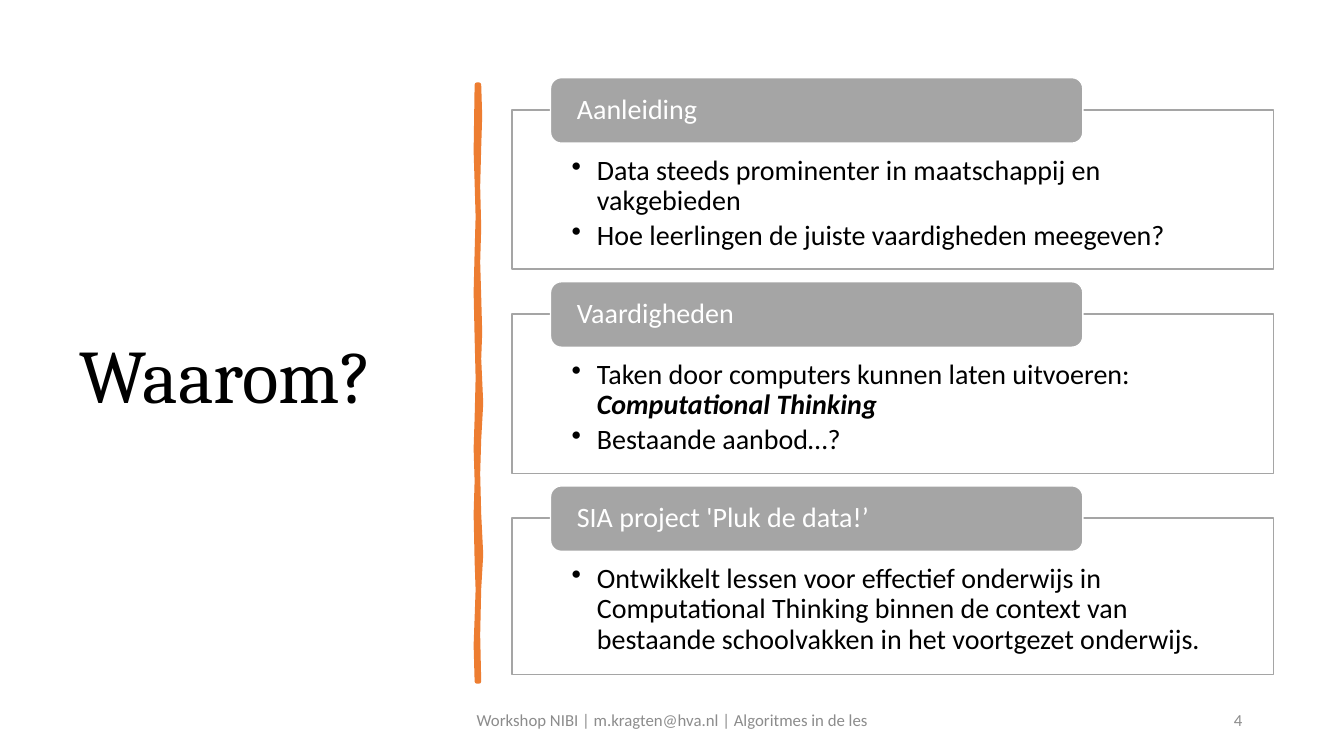
from pptx import Presentation
from pptx.dml.color import RGBColor
from pptx.enum import shapes as kinds, text as t
from pptx.util import Inches, Pt

COLORS = {"text": "000000", "card": "FFFFFF", "gray": "A5A5A5",
          "accent": "ED7D31", "footer": "8C8C8C"}
EMPHASIS = "Computational Thinking"
# heading, card height, bullets; each bullet is a list of runs
SECTIONS = [
    ("Aanleiding", 1.58, [
        ["Data steeds prominenter in maatschappij en vakgebieden"],
        ["Hoe leerlingen de juiste vaardigheden meegeven?"]]),
    ("Vaardigheden", 1.58, [
        ["Taken door computers kunnen laten uitvoeren: ", EMPHASIS],
        ["Bestaande aanbod…?"]]),
    ("SIA project 'Pluk de data!’", 1.55, [
        ["Ontwikkelt lessen voor effectief onderwijs in Computational Thinking "
         "binnen de context van bestaande schoolvakken in het voortgezet onderwijs."]]),
]
FIRST_CARD_TOP, CARD_PITCH = 1.09, 2.025
# brush stroke edges in hundredths of an inch
RIGHT_EDGE = [(475, 84), (476, 115), (475, 146), (474, 185), (475, 226), (474, 260),
              (475, 294), (476, 330), (475, 356), (477, 400), (475, 436), (474, 470),
              (475, 510), (477, 550), (475, 584), (474, 630), (475, 676)]
LEFT_EDGE = [(473, 676), (472, 640), (473, 613), (474, 585), (473, 557), (472, 510),
             (473, 477), (472, 445), (473, 415), (474, 375), (473, 335), (472, 290),
             (473, 250), (474, 215), (473, 181), (472, 150), (473, 84)]


def rgb(name):
    return RGBColor.from_string(COLORS[name])


def style_font(font, size, color, name="Calibri"):
    font.size, font.name = Pt(size), name
    font.color.rgb = rgb(color)


def paint(shape, fill, line, width):
    shape.shadow.inherit = False
    shape.fill.solid()
    shape.fill.fore_color.rgb = rgb(fill)
    shape.line.color.rgb = rgb(line)
    shape.line.width = Pt(width)


def set_frame(frame, anchor, left=0.1, top=0.05, right=0.1, bottom=0.05):
    frame.word_wrap = True
    frame.auto_size = t.MSO_AUTO_SIZE.NONE
    frame.vertical_anchor = anchor
    frame.margin_left, frame.margin_top = Inches(left), Inches(top)
    frame.margin_right, frame.margin_bottom = Inches(right), Inches(bottom)


def write_line(frame, words, size, color, align, name="Calibri"):
    frame.text = words
    paragraph = frame.paragraphs[0]
    paragraph.alignment = align
    paragraph.line_spacing = 0.9
    style_font(paragraph.runs[0].font, size, color, name)


def add_bullet(paragraph, parts):
    paragraph.alignment = t.PP_ALIGN.LEFT
    paragraph.line_spacing = 0.9
    paragraph.space_after = Pt(3)
    properties = paragraph._p.get_or_add_pPr()
    properties.set("marL", str(Inches(0.25)))
    properties.set("indent", str(-Inches(0.25)))
    bullet = properties.makeelement(
        "{http://schemas.openxmlformats.org/drawingml/2006/main}buChar", {"char": "•"})
    properties.append(bullet)
    for part in parts:
        run = paragraph.add_run()
        run.text = part
        style_font(run.font, 20, "text")
        if part == EMPHASIS:
            run.font.bold = run.font.italic = True


def add_section(slide, top, heading, height, bullets):
    """Outlined card of bullets with a heading tab over its top edge."""
    card = slide.shapes.add_shape(kinds.MSO_SHAPE.RECTANGLE, Inches(5.08), Inches(top),
                                  Inches(7.55), Inches(height))
    paint(card, "card", "gray", 1)
    frame = card.text_frame
    set_frame(frame, t.MSO_ANCHOR.TOP, 0.59, 0.46, 0.59, 0.16)
    for index, parts in enumerate(bullets):
        add_bullet(frame.add_paragraph() if index else frame.paragraphs[0], parts)

    tab = slide.shapes.add_shape(kinds.MSO_SHAPE.ROUNDED_RECTANGLE, Inches(5.46),
                                 Inches(top - 0.32), Inches(5.28), Inches(0.65))
    paint(tab, "gray", "card", 1)
    set_frame(tab.text_frame, t.MSO_ANCHOR.MIDDLE, 0.23, 0, 0.23, 0)
    write_line(tab.text_frame, heading, 20, "card", t.PP_ALIGN.LEFT)


def add_title(slide):
    title = slide.shapes.title
    title.left, title.top = Inches(0.69), Inches(0.7)
    title.width, title.height = Inches(3.74), Inches(6.11)
    set_frame(title.text_frame, t.MSO_ANCHOR.MIDDLE)
    write_line(title.text_frame, "Waarom?", 54, "text", t.PP_ALIGN.LEFT, "Cambria")


def add_brush_stroke(slide):
    builder = slide.shapes.build_freeform(*RIGHT_EDGE[0], scale=Inches(0.01))
    builder.add_line_segments(RIGHT_EDGE[1:] + LEFT_EDGE, close=True)
    paint(builder.convert_to_shape(), "accent", "accent", 3.25)


def add_footer(slide, words, left, width, align):
    box = slide.shapes.add_textbox(Inches(left), Inches(6.95), Inches(width), Inches(0.4))
    set_frame(box.text_frame, t.MSO_ANCHOR.MIDDLE)
    write_line(box.text_frame, words, 12, "footer", align)


def main():
    deck = Presentation()
    deck.slide_width, deck.slide_height = Inches(13.33), Inches(7.5)
    slide = deck.slides.add_slide(deck.slide_layouts[5])
    add_title(slide)
    add_brush_stroke(slide)
    for index, section in enumerate(SECTIONS):
        add_section(slide, FIRST_CARD_TOP + index * CARD_PITCH, *section)
    add_footer(slide, "Workshop NIBI | m.kragten@hva.nl | Algoritmes in de les",
               4.42, 4.5, t.PP_ALIGN.CENTER)
    add_footer(slide, "4", 9.42, 3, t.PP_ALIGN.RIGHT)
    deck.save("out.pptx")


if __name__ == "__main__":
    main()
